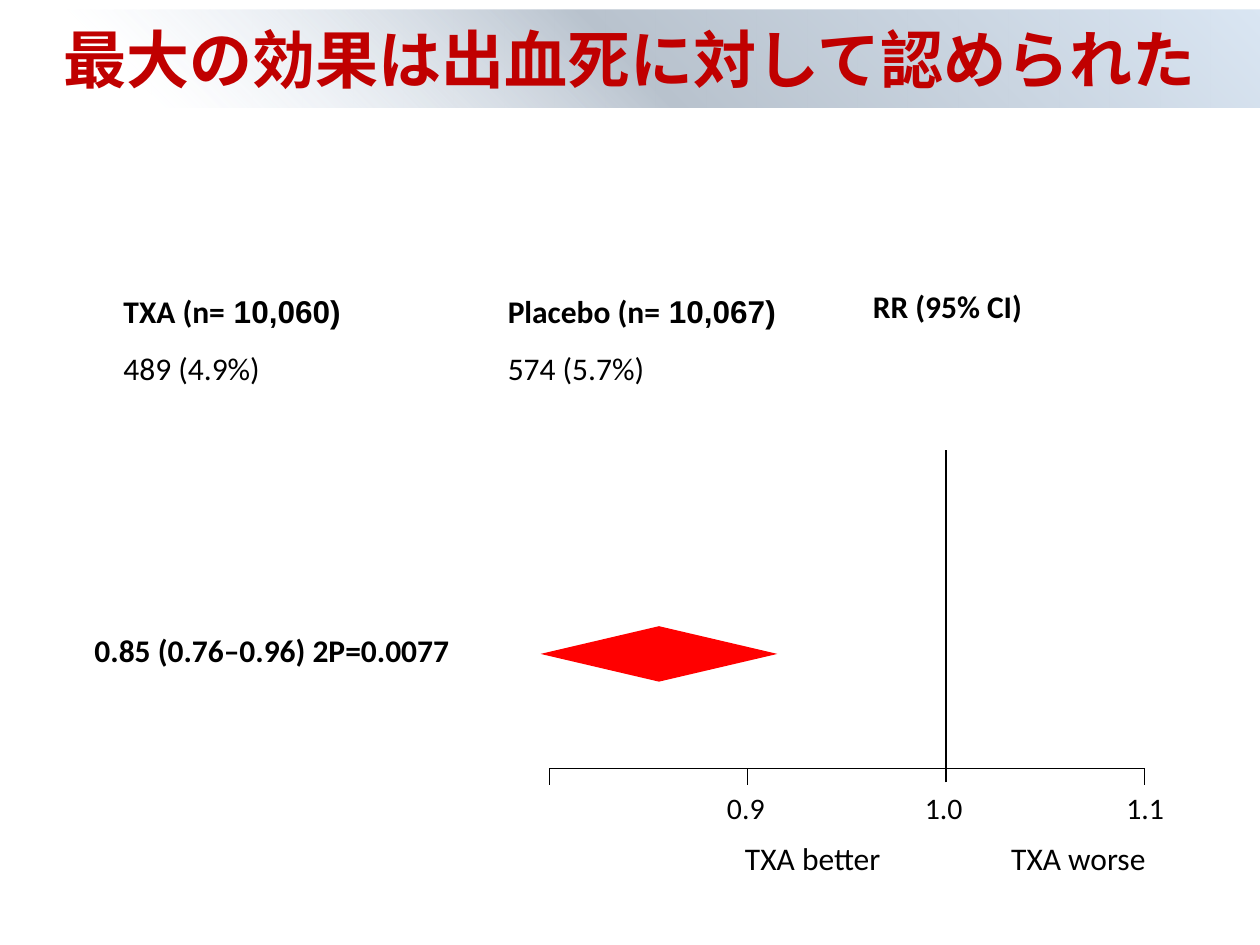
from dataclasses import dataclass

from lxml import etree
from pptx import Presentation
from pptx.dml.color import RGBColor
from pptx.enum.shapes import MSO_CONNECTOR, MSO_SHAPE
from pptx.enum.text import MSO_ANCHOR, MSO_AUTO_SIZE, PP_ALIGN
from pptx.oxml import parse_xml
from pptx.oxml.ns import nsdecls, qn
from pptx.util import Inches, Pt

LEFT, CENTER = PP_ALIGN.LEFT, PP_ALIGN.CENTER
MIDDLE = MSO_ANCHOR.MIDDLE
NO_FIT = MSO_AUTO_SIZE.NONE
STRAIGHT = MSO_CONNECTOR.STRAIGHT
DIAMOND = MSO_SHAPE.DIAMOND

BLACK, RED, DARK_RED = "000000", "FF0000", "C00000"
AXIS_Y = 6.1
TICK = 0.13
UNIT = 1.575  # inches per 0.1 of relative risk
ONE_X = 7.51  # place of relative risk 1.0


@dataclass
class Group:
    name: str
    count: str
    deaths: str
    left: float
    width: float


@dataclass
class Label:
    text: str
    left: float
    top: float
    width: float
    size: int = 18
    bold: bool = False
    align: PP_ALIGN = LEFT
    wrap: bool = True


GROUPS = [
    Group("TXA (n=", " 10,060)", "489 (4.9%)", 0.98, 2.28),
    Group("Placebo (n=", " 10,067)", "574 (5.7%)", 4.03, 2.62),
]
LABELS = [
    Label("RR (95% CI)", 5.47, 2.28, 4.1, bold=True, align=CENTER),
    Label("0.85 (0.76–0.96) 2P=0.0077", 0.75, 5.01, 3.36, bold=True),
    Label("TXA better", 5.67, 6.66, 1.56, align=CENTER),
    Label(" TXA worse", 7.74, 6.66, 1.58, align=CENTER),
    Label("0.9", 5.77, 6.27, 0.3, size=17, wrap=False),
    Label("1.0", 7.34, 6.27, 0.3, size=17, wrap=False),
    Label("1.1", 8.94, 6.27, 0.3, size=17, wrap=False),
]


def color(code: str) -> RGBColor:
    return RGBColor.from_string(code)


def write(para, text: str, *, size=18, font="Calibri", bold=False,
          ink=BLACK, align=LEFT, space=None) -> None:
    para.alignment = align
    if space:
        para.line_spacing = space
    run = para.add_run()
    run.text = text
    run.font.name = font
    run.font.size = Pt(size)
    run.font.bold = bold
    run.font.color.rgb = color(ink)


def add_box(slide, left: float, top: float, width: float, height: float,
            wrap: bool = True):
    box = slide.shapes.add_textbox(*map(Inches, (left, top, width, height)))
    frame = box.text_frame
    frame.margin_left = frame.margin_right = 0
    frame.margin_top = frame.margin_bottom = 0
    frame.word_wrap = wrap
    return frame


def add_label(slide, item: Label) -> None:
    frame = add_box(slide, item.left, item.top, item.width, 0.3, item.wrap)
    write(frame.paragraphs[0], item.text, size=item.size, bold=item.bold,
          align=item.align)


def add_group(slide, group: Group) -> None:
    frame = add_box(slide, group.left, 2.17, group.width, 0.9)
    head = frame.paragraphs[0]
    write(head, group.name, bold=True, space=1.5)
    write(head, group.count, font="Arial", bold=True, space=1.5)
    write(frame.add_paragraph(), group.deaths, space=1.5)


def add_line(slide, x1: float, y1: float, x2: float, y2: float,
             weight: float = 0.75) -> None:
    line = slide.shapes.add_connector(
        STRAIGHT, *map(Inches, (x1, y1, x2, y2)))
    line.line.color.rgb = color(BLACK)
    line.line.width = Pt(weight)
    etree.SubElement(line._element.spPr, qn("a:effectLst"))


def add_title(slide, text: str) -> None:
    title = slide.shapes.title
    title.left, title.top = Inches(0), Inches(0.08)
    title.width, title.height = Inches(10), Inches(0.77)
    # Gradient from clear to pale blue, rising to the right
    title._element.spPr.append(parse_xml(
        f'<a:gradFill {nsdecls("a")} rotWithShape="1"><a:gsLst>'
        '<a:gs pos="12000"><a:srgbClr val="DCE6F2"><a:alpha val="0"/>'
        '</a:srgbClr></a:gs>'
        '<a:gs pos="50000"><a:srgbClr val="B8C2CD"/></a:gs>'
        '<a:gs pos="100000"><a:srgbClr val="DAE6F3"/></a:gs>'
        '</a:gsLst><a:lin ang="18900000" scaled="0"/></a:gradFill>'))
    frame = title.text_frame
    frame.auto_size = NO_FIT
    frame.word_wrap = True
    frame.vertical_anchor = MIDDLE
    write(frame.paragraphs[0], text, size=36, bold=True, ink=DARK_RED,
          align=CENTER)


def add_plot(slide) -> None:
    # Axis with a tick at each 0.1
    ticks = [ONE_X + UNIT * step for step in (-2, -1, 1)]
    add_line(slide, ticks[0], AXIS_Y, ticks[-1], AXIS_Y)
    for x in ticks:
        add_line(slide, x, AXIS_Y + TICK, x, AXIS_Y)
    # Line of no effect
    add_line(slide, ONE_X, 6.21, ONE_X, 3.57, weight=1)
    # Pooled estimate
    mark = slide.shapes.add_shape(
        DIAMOND, *map(Inches, (4.29, 4.97, 1.88, 0.44)))
    mark.shadow.inherit = False
    mark.fill.solid()
    mark.fill.fore_color.rgb = color(RED)
    mark.line.fill.background()


def main() -> None:
    deck = Presentation()
    deck.slide_width, deck.slide_height = Inches(10), Inches(7.5)
    slide = deck.slides.add_slide(deck.slide_layouts[5])
    add_title(slide, "最大の効果は出血死に対して認められた")
    add_plot(slide)
    for group in GROUPS:
        add_group(slide, group)
    for item in LABELS:
        add_label(slide, item)
    deck.save("out.pptx")


if __name__ == "__main__":
    main()
